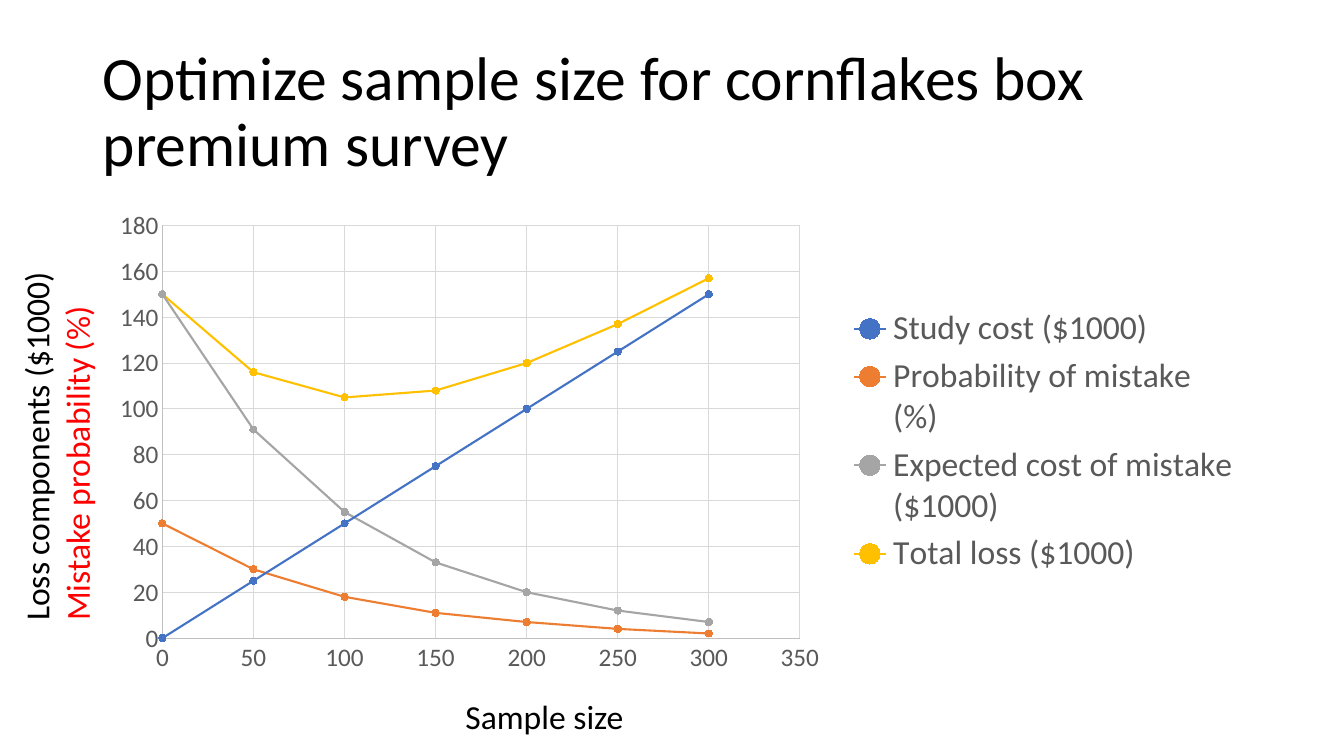
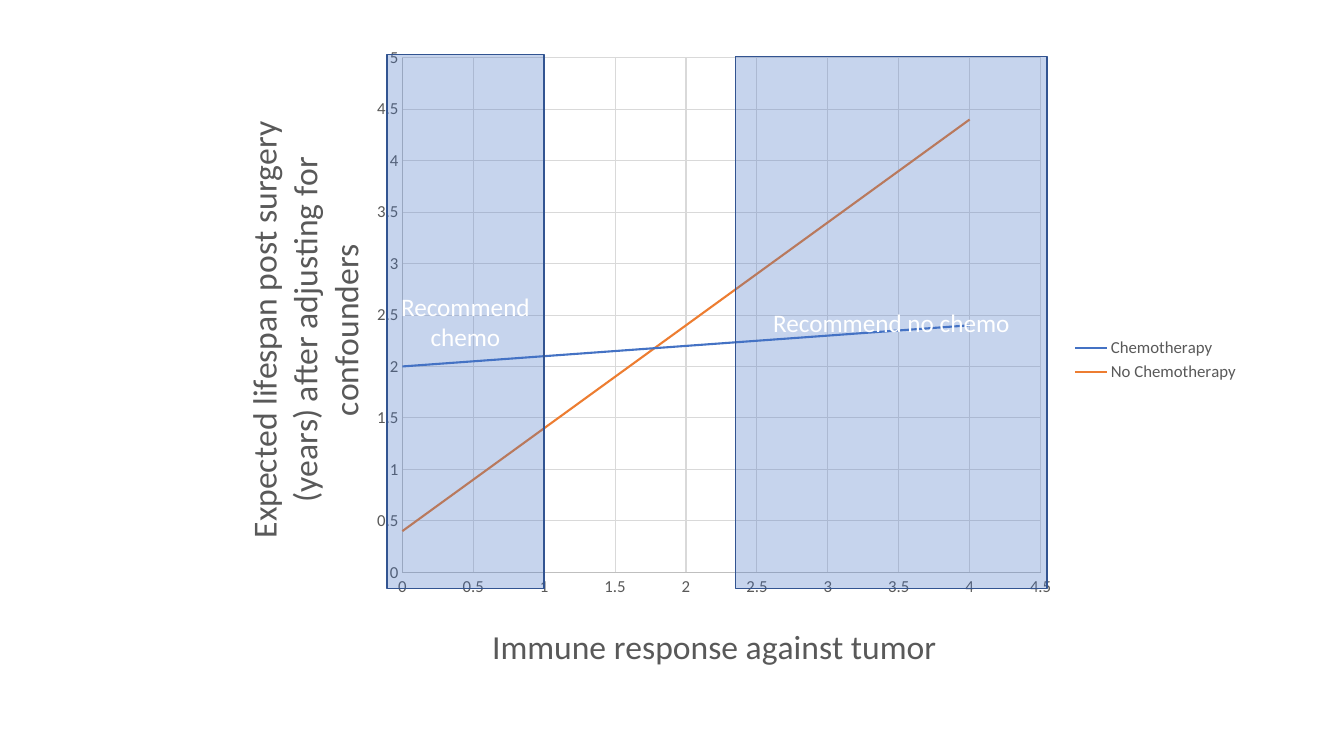
"""Build two slides of scatter charts on sample size and treatment choice."""
from lxml.etree import SubElement
from pptx import Presentation
from pptx.chart.data import XyChartData
from pptx.dml.color import RGBColor
from pptx.enum.chart import (XL_CHART_TYPE, XL_LEGEND_POSITION,
                             XL_MARKER_STYLE, XL_TICK_MARK)
from pptx.enum.shapes import MSO_SHAPE
from pptx.enum.text import MSO_ANCHOR, MSO_AUTO_SIZE, PP_ALIGN
from pptx.oxml import parse_xml
from pptx.oxml.ns import nsdecls, qn
from pptx.util import Cm, Pt

FONT = "Calibri"
BLACK = RGBColor(0x00, 0x00, 0x00)
WHITE = RGBColor(0xFF, 0xFF, 0xFF)
RED = RGBColor(0xFF, 0x00, 0x00)
TEXT_GRAY = RGBColor(0x59, 0x59, 0x59)
AXIS_GRAY = RGBColor(0xBF, 0xBF, 0xBF)
GRID_GRAY = RGBColor(0xD9, 0xD9, 0xD9)
BLUE = RGBColor(0x44, 0x72, 0xC4)
ORANGE = RGBColor(0xED, 0x7D, 0x31)
GRAY = RGBColor(0xA5, 0xA5, 0xA5)
GOLD = RGBColor(0xFF, 0xC0, 0x00)
OUTLINE = RGBColor(0x32, 0x54, 0x91)
SERIES_COLORS = (BLUE, ORANGE, GRAY, GOLD)


def set_font(font, size, color):
    """Set the shared typeface with a size and colour."""
    font.name = FONT
    font.size = Pt(size)
    font.bold = False
    font.color.rgb = color


def set_line(line, color, width):
    """Draw a solid line."""
    line.color.rgb = color
    line.width = Pt(width)


def add_text(slide, box, lines, size=24):
    """Add a text box with one paragraph for each (text, colour) pair."""
    sp = slide.shapes.add_textbox(*map(Cm, box))
    tf = sp.text_frame
    tf.word_wrap = True
    for i, (text, color) in enumerate(lines):
        p = tf.paragraphs[0] if i == 0 else tf.add_paragraph()
        p.text = text
        set_font(p.font, size, color)
    return sp


def add_title(slide, text):
    """Add the slide title."""
    sp = add_text(slide, (2.34, 1.02, 29.21, 3.68), [(text, BLACK)], 44)
    sp.text_frame.vertical_anchor = MSO_ANCHOR.MIDDLE
    sp.text_frame.paragraphs[0].line_spacing = 0.9


def add_label(slide, box, lines, rotation=0):
    """Add an axis label that grows with its text."""
    sp = add_text(slide, box, lines)
    sp.text_frame.auto_size = MSO_AUTO_SIZE.SHAPE_TO_FIT_TEXT
    sp.rotation = rotation


def set_layout(element, **places):
    """Place a chart part by fractions of the chart area."""
    old = element.find(qn("c:layout"))
    if old is not None:
        element.remove(old)
    layout = parse_xml(f"<c:layout {nsdecls('c')}><c:manualLayout/></c:layout>")
    manual = layout[0]
    if "w" in places:
        SubElement(manual, qn("c:layoutTarget")).set("val", "inner")
    for name in ("xMode", "yMode"):
        SubElement(manual, qn(f"c:{name}")).set("val", "edge")
    for name, value in places.items():
        SubElement(manual, qn(f"c:{name}")).set("val", str(value))
    element.insert(0 if element.find(qn("c:tx")) is None else 1, layout)


def style_axis(axis, top, step, size):
    """Scale an axis from zero and style its lines and labels."""
    axis.minimum_scale = 0
    axis.maximum_scale = top
    axis.major_unit = step
    axis.major_tick_mark = axis.minor_tick_mark = XL_TICK_MARK.NONE
    axis.has_major_gridlines = True
    set_line(axis.major_gridlines.format.line, GRID_GRAY, 0.75)
    set_line(axis.format.line, AXIS_GRAY, 0.75)
    set_font(axis.tick_labels.font, size, TEXT_GRAY)


def add_axis_title(axis, text, x, y):
    """Add a placed axis title."""
    axis.has_title = True
    p = axis.axis_title.text_frame.paragraphs[0]
    p.text = text
    set_font(p.font, 24, TEXT_GRAY)
    set_layout(axis.axis_title._element, x=x, y=y)


def add_scatter(slide, box, xs, series, x_scale, y_scale, plot_box,
                tick_size, legend_size, markers):
    """Add a scatter chart with straight lines."""
    data = XyChartData()
    for name, ys in series.items():
        points = data.add_series(name)
        for x, y in zip(xs, ys):
            points.add_data_point(x, y)
    kind = (XL_CHART_TYPE.XY_SCATTER_LINES if markers
            else XL_CHART_TYPE.XY_SCATTER_LINES_NO_MARKERS)
    chart = slide.shapes.add_chart(kind, *map(Cm, box), data).chart
    chart.has_title = False
    set_font(chart.font, 10, BLACK)
    plot = chart.plots[0]
    plot.vary_by_categories = False
    for s, color in zip(plot.series, SERIES_COLORS):
        s.smooth = False
        set_line(s.format.line, color, 1.5)
        if markers:
            s.marker.style = XL_MARKER_STYLE.CIRCLE
            s.marker.size = 5
            s.marker.format.fill.solid()
            s.marker.format.fill.fore_color.rgb = color
            set_line(s.marker.format.line, color, 0.75)
    style_axis(chart.category_axis, *x_scale, tick_size)
    style_axis(chart.value_axis, *y_scale, tick_size)
    chart.has_legend = True
    chart.legend.position = XL_LEGEND_POSITION.RIGHT
    chart.legend.include_in_layout = False
    set_font(chart.legend.font, legend_size, TEXT_GRAY)
    set_layout(chart._chartSpace.chart.plotArea, **dict(zip("xywh", plot_box)))
    return chart


def add_region(slide, box, text):
    """Add a see-through rectangle with a centred label."""
    sp = slide.shapes.add_shape(MSO_SHAPE.RECTANGLE, *map(Cm, box))
    sp.shadow.inherit = False
    sp.fill.solid()
    sp.fill.fore_color.rgb = BLUE
    color = sp._element.spPr.find(qn("a:solidFill"))[0]
    SubElement(color, qn("a:alpha")).set("val", "30000")
    set_line(sp.line, OUTLINE, 1)
    tf = sp.text_frame
    tf.word_wrap = True
    tf.vertical_anchor = MSO_ANCHOR.MIDDLE
    p = tf.paragraphs[0]
    p.text = text
    p.alignment = PP_ALIGN.CENTER
    set_font(p.font, 18, WHITE)


def build_sample_size(slide):
    """Build the sample size slide."""
    add_title(slide, "Optimize sample size for cornflakes box premium survey")
    series = {
        "Study cost ($1000)": (0, 25, 50, 75, 100, 125, 150),
        "Probability of mistake (%)": (50, 30, 18, 11, 7, 4, 2),
        "Expected cost of mistake ($1000)": (150, 91, 55, 33, 20, 12, 7),
        "Total loss ($1000)": (150, 116, 105, 108, 120, 137, 157),
    }
    add_scatter(slide, (2.34, 5.08, 29.21, 12.09), range(0, 301, 50), series,
                (350, 50), (180, 20), (0.06, 0.05, 0.55, 0.86), 18, 24, True)
    add_label(slide, (11.48, 17.4, 7.09, 1.27), [("Sample size", BLACK)])
    add_label(slide, (-4.17, 9.14, 11.2, 2.31),
              [("Loss components ($1000)", BLACK),
               ("Mistake probability (%)", RED)], 270)


def build_treatment(slide):
    """Build the treatment choice slide."""
    series = {
        "Chemotherapy": (2, 2.1, 2.2, 2.3, 2.4),
        "No Chemotherapy": (0.4, 1.4, 2.4, 3.4, 4.4),
    }
    chart = add_scatter(slide, (5.13, 0.97, 26.37, 16.21), range(5), series,
                        (4.5, 0.5), (5, 0.5), (0.19, 0.03, 0.61, 0.8),
                        12, 12, False)
    add_axis_title(chart.category_axis, "Immune response against tumor",
                   0.27, 0.9)
    add_axis_title(chart.value_axis, "Expected lifespan post surgery (years) "
                   "after adjusting for confounders", 0.03, 0.12)
    add_region(slide, (18.54, 1.42, 7.85, 13.41), "Recommend no chemo")
    add_region(slide, (9.75, 1.37, 3.96, 13.46), "Recommend chemo")


def main():
    """Build and save the presentation."""
    prs = Presentation()
    prs.slide_width, prs.slide_height = Cm(33.87), Cm(19.05)
    for build in (build_sample_size, build_treatment):
        build(prs.slides.add_slide(prs.slide_layouts[6]))
    prs.save("out.pptx")


if __name__ == "__main__":
    main()
